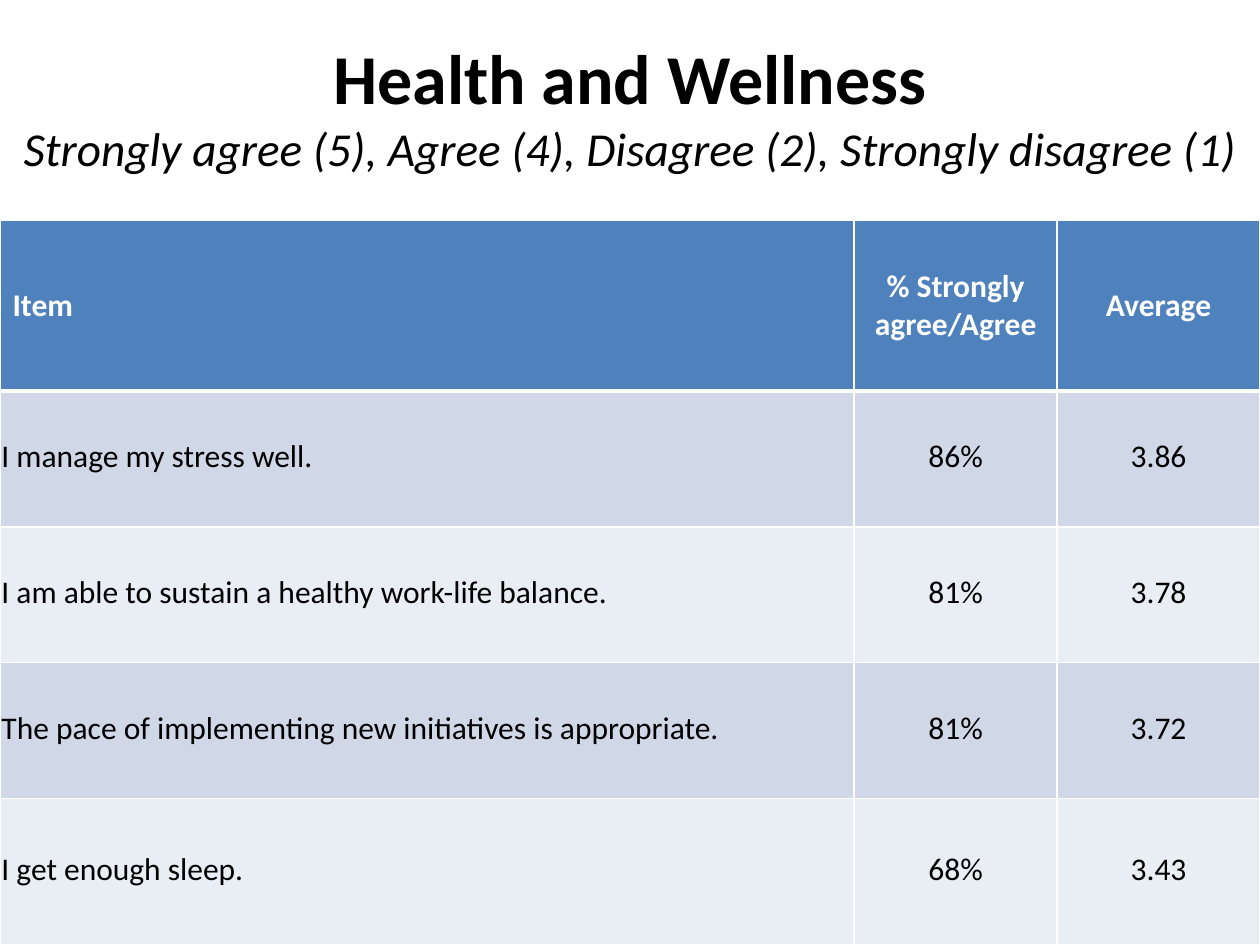
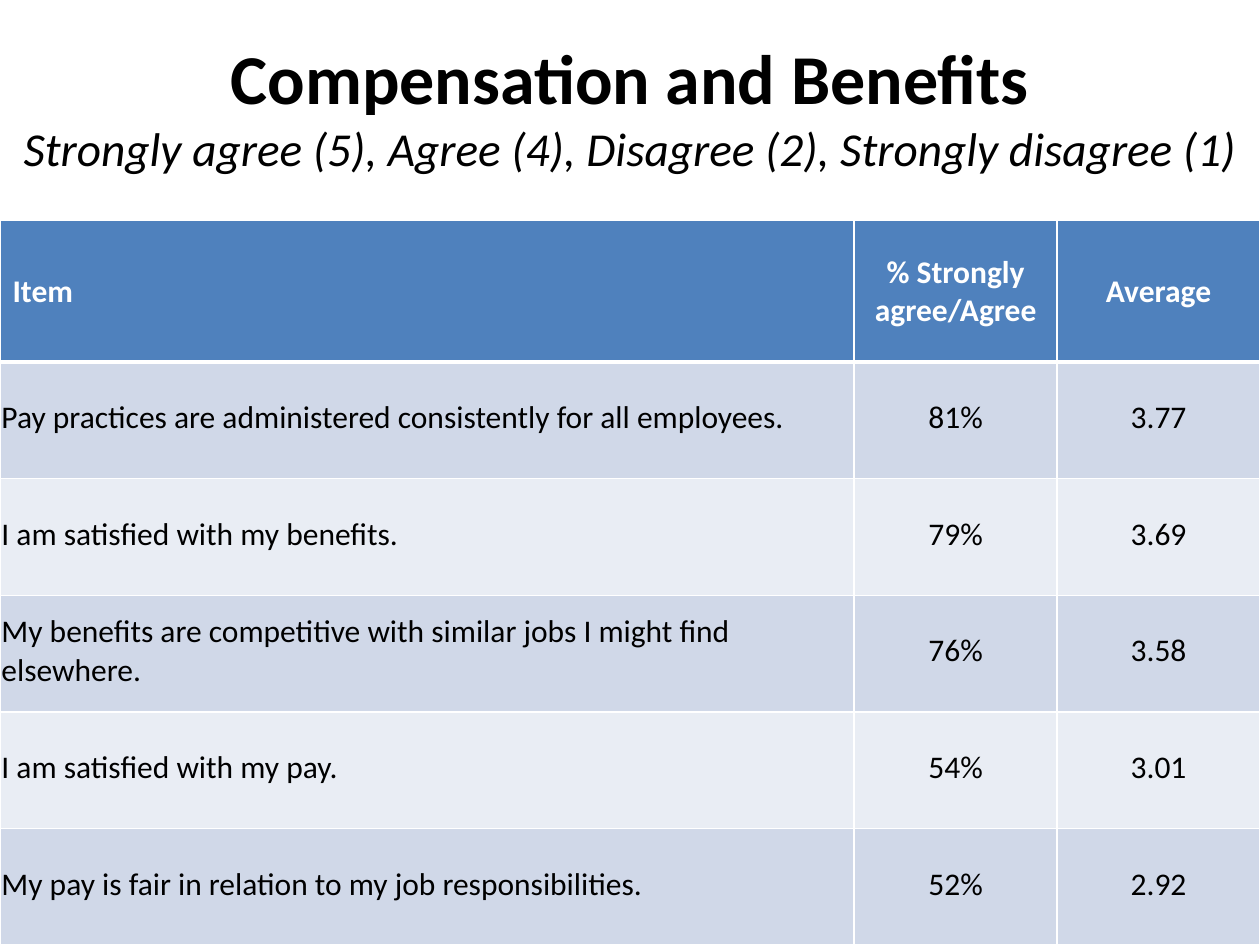
from lxml.etree import SubElement
from pptx import Presentation
from pptx.dml.color import RGBColor
from pptx.enum.text import MSO_ANCHOR as Anchor, PP_ALIGN as Align
from pptx.oxml.ns import qn
from pptx.util import Cm, Pt

COLORS = {"text": "000000", "header": "4F81BD", "header_text": "FFFFFF",
          "odd": "D0D8E8", "even": "E9EDF4", "border": "FFFFFF"}
FONT = "Calibri"
SCALE = "Strongly agree (5), Agree (4), Disagree (2), Strongly disagree (1)"
HEADINGS = ("Item", "% Strongly agree/Agree", "Average")
COLUMN_WIDTHS = (17.22, 4.09, 4.09)
TITLE_BOX = (0, 0, 25.4, 4.24)
TABLE_BOX = (0, 4.45, 25.4, 14.6)
SECTIONS = [
    ("Health and Wellness", (3.43, 2.74, 2.74, 2.74, 2.95), [
        ("I manage my stress well.", "86%", "3.86"),
        ("I am able to sustain a healthy work-life balance.", "81%", "3.78"),
        ("The pace of implementing new initiatives is appropriate.", "81%", "3.72"),
        ("I get enough sleep.", "68%", "3.43"),
    ]),
    ("Compensation and Benefits", (2.85,) + (2.35,) * 5, [
        ("Pay practices are administered consistently for all employees.", "81%", "3.77"),
        ("I am satisfied with my benefits.", "79%", "3.69"),
        ("My benefits are competitive with similar jobs I might find elsewhere.", "76%", "3.58"),
        ("I am satisfied with my pay.", "54%", "3.01"),
        ("My pay is fair in relation to my job responsibilities.", "52%", "2.92"),
    ]),
]


def style_span(span, size, color, bold=False, italic=False):
    """Set the font of one run."""
    font = span.font
    font.name, font.size, font.bold, font.italic = FONT, Pt(size), bold, italic
    font.color.rgb = RGBColor.from_string(COLORS[color])


def add_title(page, box, title):
    """Place the bold section title above the italic answer scale."""
    frame = page.shapes.add_textbox(*map(Cm, box)).text_frame
    frame.word_wrap = True
    frame.vertical_anchor = Anchor.MIDDLE
    para = frame.paragraphs[0]
    para.text = f"{title}\v{SCALE}"
    para.alignment = Align.CENTER
    title_span, scale_span = para.runs
    style_span(title_span, 40, "text", bold=True)
    style_span(scale_span, 27, "text", italic=True)


def add_borders(cell, top, bottom):
    """Draw white cell borders, with the top and bottom widths in points."""
    properties = cell._tc.get_or_add_tcPr()
    for side, width in (("L", 1), ("R", 1), ("T", top), ("B", bottom)):
        line = SubElement(properties, qn(f"a:ln{side}"), w=str(Pt(width)))
        fill = SubElement(line, qn("a:solidFill"))
        SubElement(fill, qn("a:srgbClr"), val=COLORS["border"])


def fill_cell(cell, text, row, column):
    """Write and style one cell according to its row and column."""
    is_header = row == 0
    add_borders(cell, top=3 if row == 1 else 1, bottom=3 if is_header else 1)
    fill_name = "header" if is_header else ("even", "odd")[row % 2]
    cell.fill.solid()
    cell.fill.fore_color.rgb = RGBColor.from_string(COLORS[fill_name])
    cell.vertical_anchor = Anchor.MIDDLE
    if not is_header:
        cell.margin_left = cell.margin_right = cell.margin_top = Cm(0.03)
        cell.margin_bottom = Cm(0.13)
    para = cell.text_frame.paragraphs[0]
    para.text = text
    para.alignment = Align.CENTER if column else Align.LEFT
    style_span(para.runs[0], 18, "header_text" if is_header else "text", bold=is_header)


def add_results(page, box, row_heights, results):
    """Place the survey results table in the given box."""
    rows = [HEADINGS, *results]
    table = page.shapes.add_table(len(rows), len(HEADINGS), *map(Cm, box)).table
    for column, width in zip(table.columns, COLUMN_WIDTHS):
        column.width = Cm(width)
    for row, height in zip(table.rows, row_heights):
        row.height = Cm(height)
    for row, texts in enumerate(rows):
        for column, text in enumerate(texts):
            fill_cell(table.cell(row, column), text, row, column)


def main():
    """Build one results page for each survey section."""
    deck = Presentation()
    deck.slide_width, deck.slide_height = Cm(25.4), Cm(19.05)
    for title, row_heights, results in SECTIONS:
        page = deck.slides.add_slide(deck.slide_layouts[6])
        add_title(page, TITLE_BOX, title)
        add_results(page, TABLE_BOX, row_heights, results)
    deck.save("out.pptx")


if __name__ == "__main__":
    main()
